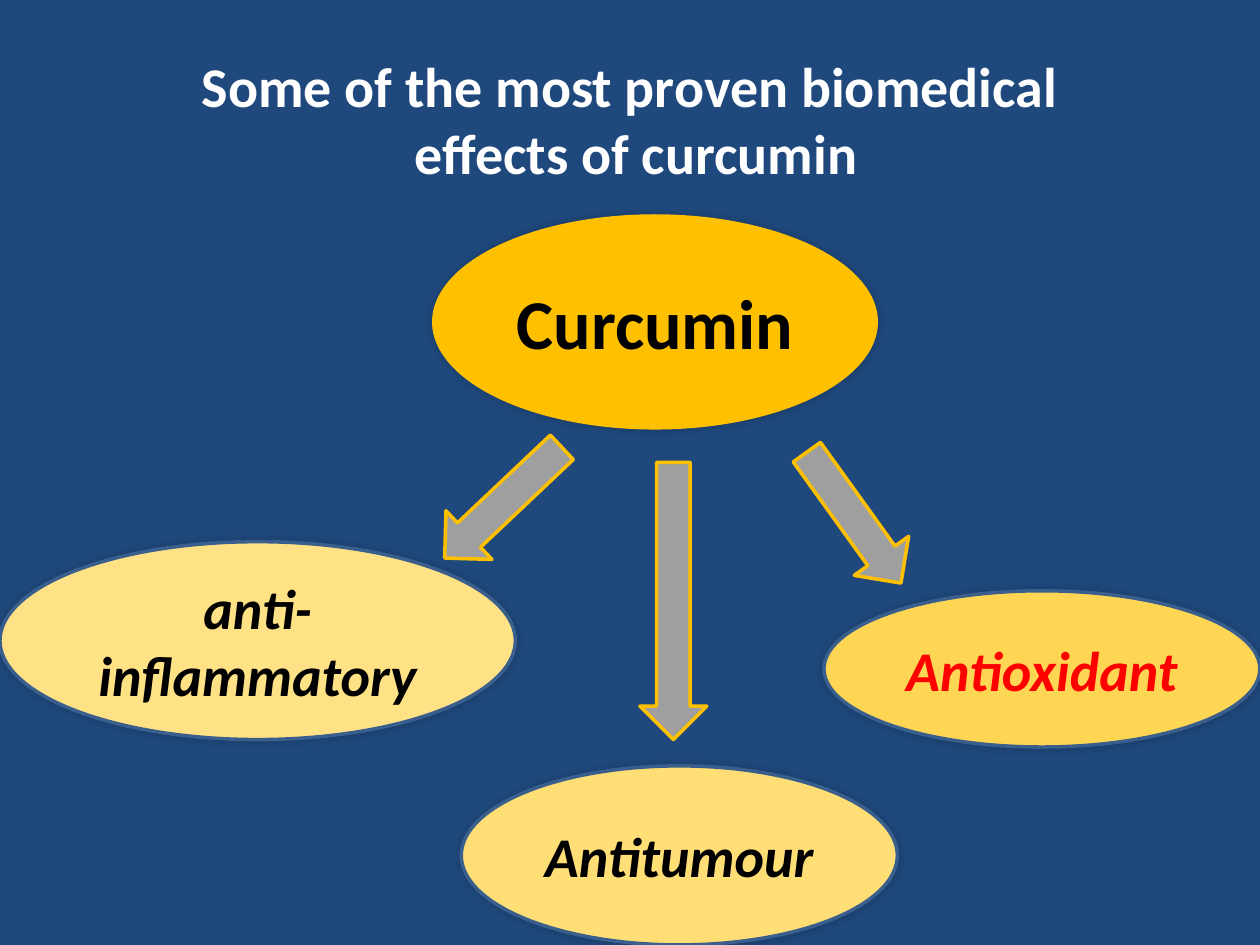
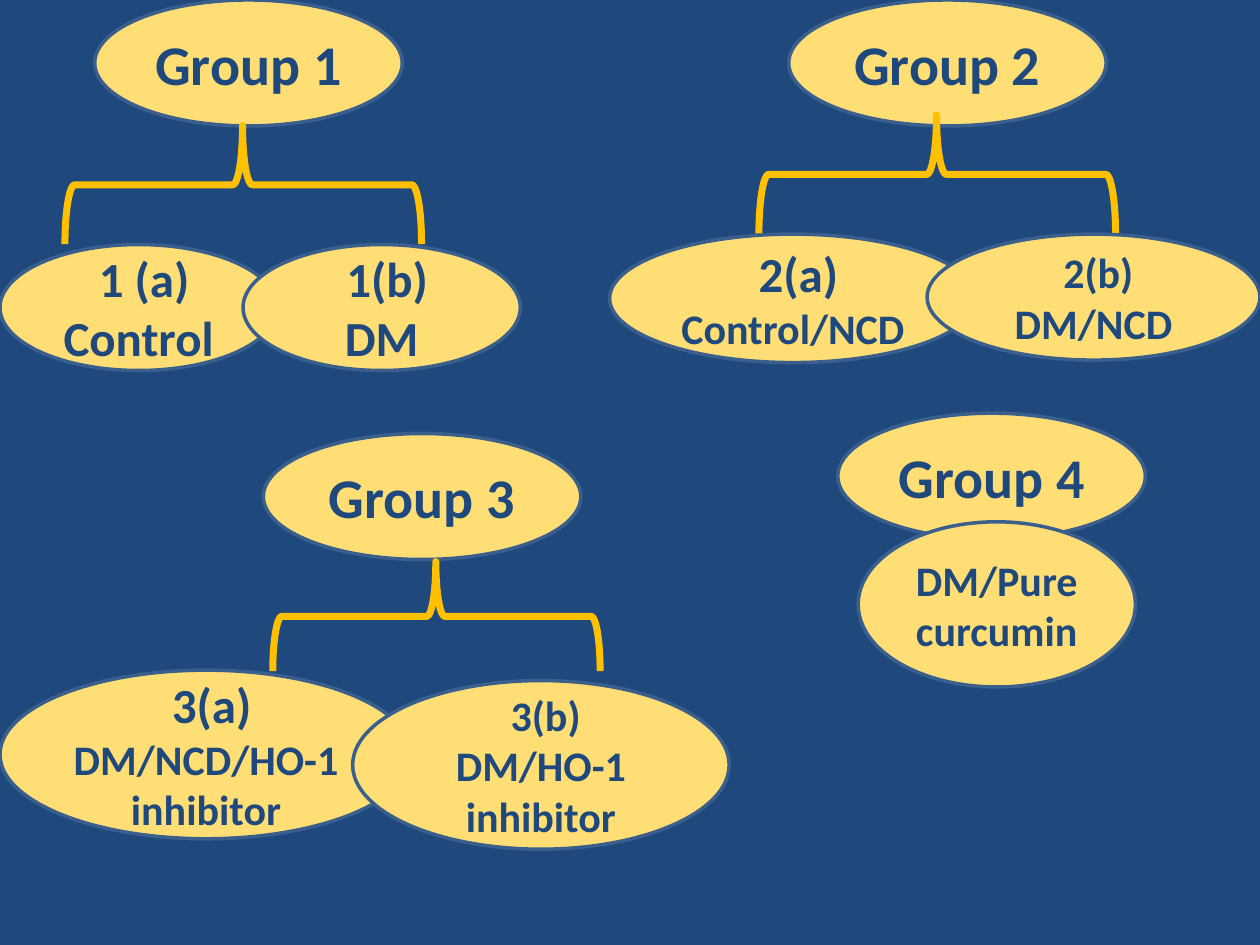
from dataclasses import dataclass

from lxml.etree import SubElement
from pptx import Presentation
from pptx.dml.color import RGBColor as RGB
from pptx.enum.shapes import MSO_SHAPE as Shape
from pptx.enum.text import MSO_ANCHOR as Anchor, PP_ALIGN as Align
from pptx.oxml.ns import qn
from pptx.util import Cm, Pt


@dataclass(frozen=True)
class Theme:
    font: str = "Calibri"
    navy: str = "1F497D"
    outline: str = "3A5F8C"
    gold: str = "FFC000"
    amber: str = "FFD653"
    sand: str = "FFDE75"
    cream: str = "FFE285"
    grey: str = "9F9F9F"
    black: str = "000000"
    white: str = "FFFFFF"
    red: str = "FF0000"
    hub: int = 40
    title: int = 32
    label: int = 28
    small: int = 24
    thin: int = 2
    thick: int = 4


T = Theme()
WIDTH, HEIGHT = 25.4, 19.05


def place(box, origin=(0, 0)):
    """Lengths of a box (left, top, width, height) shifted to its region."""
    left, top, width, height = box
    return [Cm(v) for v in (left + origin[0], top + origin[1], width, height)]


def write(tf, lines, color, italic=False):
    """Write (text, size) lines as centred bold paragraphs."""
    tf.word_wrap = True
    for i, (text, size) in enumerate(lines):
        p = tf.add_paragraph() if i else tf.paragraphs[0]
        p.alignment = Align.CENTER
        r = p.add_run()
        r.text = text
        fmt = {"name": T.font, "size": Pt(size), "bold": True, "italic": italic}
        for name, value in fmt.items():
            setattr(r.font, name, value)
        r.font.color.rgb = RGB.from_string(color)


def add_figure(s, kind, bounds, fill=None, line=None, weight=T.thin):
    sp = s.shapes.add_shape(kind, *bounds)
    sp.shadow.inherit = False
    if fill:
        sp.fill.solid()
        sp.fill.fore_color.rgb = RGB.from_string(fill)
    else:
        sp.fill.background()
    if line:
        sp.line.color.rgb = RGB.from_string(line)
        sp.line.width = Pt(weight)
    else:
        sp.line.fill.background()
    return sp


def add_soft_shadow(sp):
    effects = sp._element.spPr.find(qn("a:effectLst"))
    shadow = SubElement(effects, qn("a:outerShdw"), blurRad=str(Pt(6)),
                        dist="0", dir="13500000", rotWithShape="0")
    color = SubElement(shadow, qn("a:srgbClr"), val=T.black)
    SubElement(color, qn("a:alpha"), val="20000")


def add_oval(s, bounds, lines, fill=T.sand, line=T.outline, color=T.navy, italic=False):
    sp = add_figure(s, Shape.OVAL, bounds, fill, line)
    sp.text_frame.vertical_anchor = Anchor.MIDDLE
    write(sp.text_frame, lines, color, italic)
    return sp


def add_brace(s, box, origin):
    """Brace opening downwards that fills the box as seen after rotation."""
    left, top, width, height = box
    shift = (width - height) / 2
    upright = (left + shift, top - shift, height, width)
    sp = add_figure(s, Shape.RIGHT_BRACE, place(upright, origin),
                    line=T.gold, weight=T.thick)
    sp.rotation = 270
    sp.adjustments[0], sp.adjustments[1] = 0.083, 0.498


def add_group(s, origin, head, name, children, brace=None):
    """Head oval, optional brace and child ovals, relative to origin."""
    add_oval(s, place(head, origin), [(name, T.title)])
    if brace:
        add_brace(s, brace, origin)
    for box, lines in children:
        add_oval(s, place(box, origin), lines)


def new_slide(prs):
    s = prs.slides.add_slide(prs.slide_layouts[6])
    s.background.fill.solid()
    s.background.fill.fore_color.rgb = RGB.from_string(T.navy)
    return s


def effects_slide(prs):
    s = new_slide(prs)

    # Hub and the three effects
    ovals = [
        ((8.71, 4.32, 8.99, 4.34), "Curcumin", T.hub, T.gold, None, T.black, False),
        ((16.61, 11.91, 8.79, 3.15), "Antioxidant", T.title, T.amber, T.outline, T.red, True),
        ((9.3, 15.44, 8.79, 3.61), "Antitumour", T.title, T.sand, T.outline, T.black, True),
        ((0, 10.92, 10.39, 3.99), "anti-inflammatory", T.title, T.cream, T.outline, T.black, True),
    ]
    for box, text, size, *style in ovals:
        add_soft_shadow(add_oval(s, place(box), [(text, size)], *style))

    # Arrows from the hub
    for left, top, length, angle in [(9.47, 8.51, 3.25, 46.6),
                                     (16.54, 8.81, 3.25, 324.3),
                                     (12.9, 9.32, 5.59, 0)]:
        sp = add_figure(s, Shape.DOWN_ARROW, place((left, top, 1.35, length)),
                        T.grey, T.gold)
        sp.rotation = angle

    # Title
    tb = s.shapes.add_textbox(*place((0, 0.91, WIDTH, 3)))
    write(tb.text_frame, [("Some of the most proven biomedical", T.title),
                          (" effects of curcumin", T.title)], T.white)


def groups_slide(prs):
    s = new_slide(prs)
    add_group(s, (0, 0), (1.91, 0, 6.2, 2.54), "Group 1", [
        ((0, 4.93, 5.59, 2.54), [(" 1 (a)", T.label), ("Control", T.label)]),
        ((4.9, 4.93, 5.59, 2.54), [(" 1(b)", T.label), ("DM", T.label)]),
    ], brace=(1.31, 2.53, 7.19, 2.39))
    add_group(s, (12.29, 0), (3.61, 0, 6.4, 2.54), "Group 2", [
        ((0, 4.72, 7.39, 2.59), [(" 2(a)", T.label), ("Control/NCD", T.small)]),
        ((6.4, 4.72, 6.71, 2.54), [(" 2(b)", T.small), ("DM/NCD", T.small)]),
    ], brace=(3.01, 2.32, 7.19, 2.39))
    add_group(s, (0, 8.74), (5.31, 0, 6.4, 2.54), "Group 3", [
        ((0, 4.77, 8.31, 3.4), [(" 3(a)", T.label), ("DM/NCD/HO-1 inhibitor", T.small)]),
        ((7.11, 4.98, 7.59, 3.4), [(" 3(b)", T.small), ("DM/HO-1 inhibitor", T.small)]),
    ], brace=(5.5, 2.58, 6.6, 2.21))
    add_group(s, (16.89, 8.33), (0, 0, 6.2, 2.54), "Group 4", [
        ((0.41, 2.19, 5.59, 3.33), [("DM/Pure curcumin", T.small)]),
    ])


def main():
    prs = Presentation()
    prs.slide_width, prs.slide_height = Cm(WIDTH), Cm(HEIGHT)
    effects_slide(prs)
    groups_slide(prs)
    prs.save("out.pptx")


if __name__ == "__main__":
    main()
